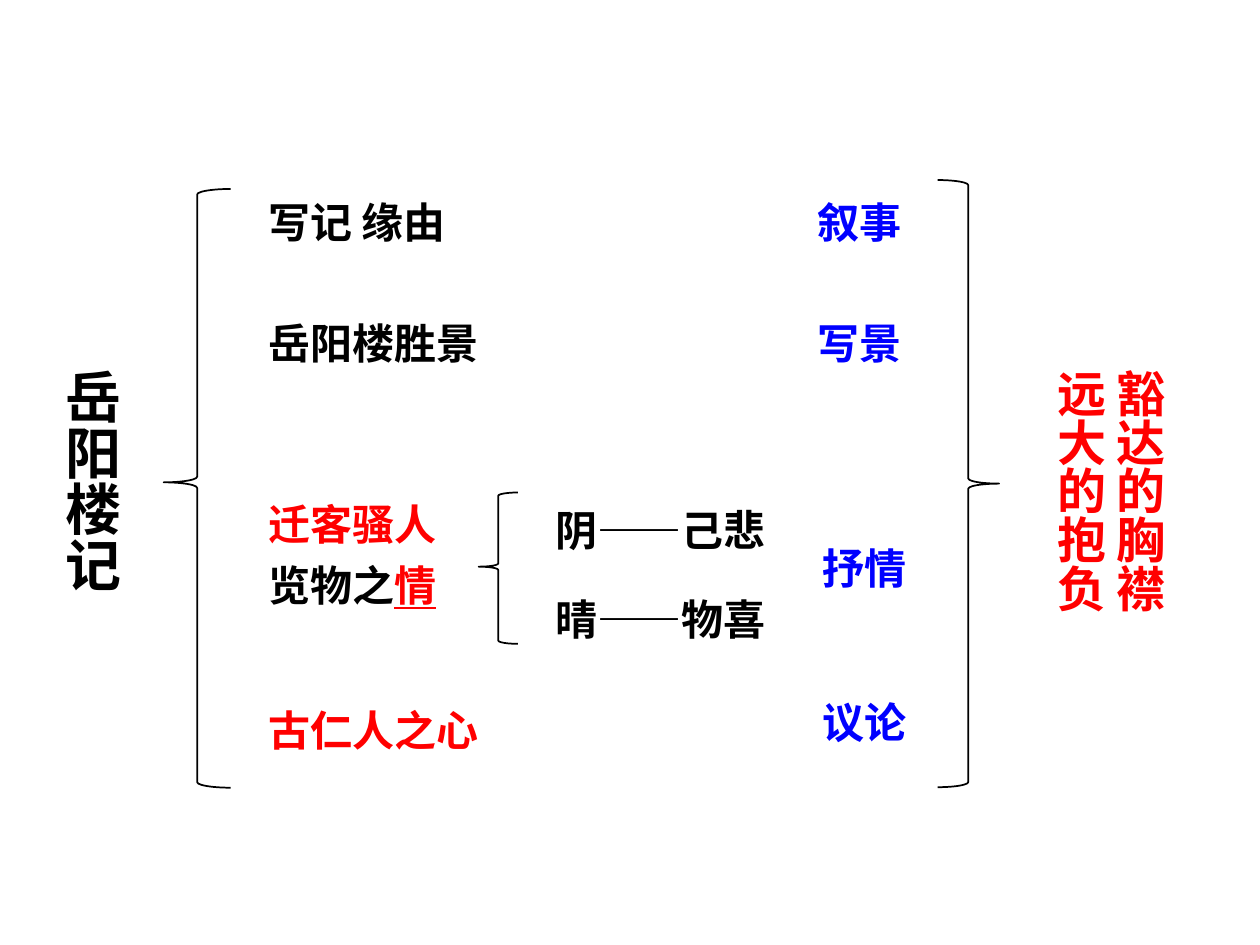
from dataclasses import dataclass

from lxml import etree
from pptx import Presentation
from pptx import util as u
from pptx.dml.color import RGBColor
from pptx.enum import shapes, text


@dataclass(frozen=True)
class Theme:
    black: RGBColor = RGBColor(0, 0, 0)
    red: RGBColor = RGBColor(255, 0, 0)
    blue: RGBColor = RGBColor(0, 0, 255)
    latin: str = "Calibri"
    chinese: str = "Noto Sans CJK SC"
    body: int = 24
    verdict: int = 28
    title: int = 32
    line: int = 1
    gap: float = 34.6  # one skipped line of body text


THEME = Theme()


def add_text(page, frame, lines, *, color=THEME.black, size=THEME.body,
             font=THEME.latin, spacing=None, gaps=None, vertical=False, wrap=True):
    """Each line is a list of (text, colour, underlined) spans or a plain string.

    gaps maps a line index to the number of line heights left above it.
    """
    box = page.shapes.add_textbox(*map(u.Cm, frame)).text_frame
    box.word_wrap = wrap
    box.auto_size = text.MSO_AUTO_SIZE.SHAPE_TO_FIT_TEXT
    if vertical:
        box._txBody.bodyPr.set("vert", "eaVert")
    for index, line in enumerate(lines):
        para = box.paragraphs[0] if index == 0 else box.add_paragraph()
        if spacing:
            para.line_spacing = spacing
        if gaps and index in gaps:
            para.space_before = u.Pt(gaps[index] * THEME.gap)
        spans = [(line, color, False)] if isinstance(line, str) else line
        for words, shade, underlined in spans:
            span = para.add_run()
            span.text = words
            span.font.name = font
            span.font.size = u.Pt(size)
            span.font.bold = True
            span.font.color.rgb = shade
            if underlined:
                span.font.underline = True


def add_brace(page, kind, frame, middle=0.5):
    brace = page.shapes.add_shape(kind, *map(u.Cm, frame))
    brace.shadow.inherit = False
    brace.fill.background()
    brace.line.color.rgb = THEME.black
    brace.line.width = u.Pt(THEME.line)
    brace.adjustments[0] = 0.083
    brace.adjustments[1] = middle


def main():
    deck = Presentation()
    deck.slide_width, deck.slide_height = u.Cm(25.4), u.Cm(19.05)
    page = deck.slides.add_slide(deck.slide_layouts[6])

    # Title of the essay, set vertically
    add_text(page, (0.76, 7.19, 2.57, 5.79), ["岳阳楼记"], size=THEME.title,
             font=THEME.chinese, spacing=1.5, vertical=True)

    # Outline of the essay
    outline = [
        "写记 缘由",
        "岳阳楼胜景",
        [("迁客骚人", THEME.red, False)],
        [("览物之", THEME.black, False), ("情", THEME.red, True)],
    ]
    add_text(page, (5.16, 3.63, 6.02, 8.86), outline, spacing=1.2, gaps={1: 1, 2: 2})
    add_text(page, (5.16, 13.77, 4.75, 1.57), ["古仁人之心"], color=THEME.red,
             spacing=1.3, wrap=False)

    # Weather and mood
    for top, mood in ((9.53, "阴——己悲"), (11.33, "晴——物喜")):
        add_text(page, (10.95, top, 4.85, 1.8), [mood], spacing=1.5)

    # Modes of writing
    modes = {"color": THEME.blue, "font": THEME.chinese}
    add_text(page, (16.23, 3.63, 2.64, 3.94), ["叙事", "写景"], spacing=1.2,
             gaps={1: 1}, **modes)
    for top, mode in ((10.82, "抒情"), (13.92, "议论")):
        add_text(page, (16.33, top, 2.57, 1.27), [mode], **modes)

    # Braces
    left, right = shapes.MSO_SHAPE.LEFT_BRACE, shapes.MSO_SHAPE.RIGHT_BRACE
    add_brace(page, left, (3.3, 3.81, 1.35, 12.07), middle=0.49)
    add_brace(page, left, (9.65, 9.93, 0.79, 3.05), middle=0.49)
    add_brace(page, right, (18.9, 3.63, 1.24, 12.24))

    # Conclusion, set vertically
    add_text(page, (20.78, 7.19, 2.9, 7.04), ["豁达的胸襟", "远大的抱负"],
             color=THEME.red, size=THEME.verdict, vertical=True)

    deck.save("out.pptx")


if __name__ == "__main__":
    main()
